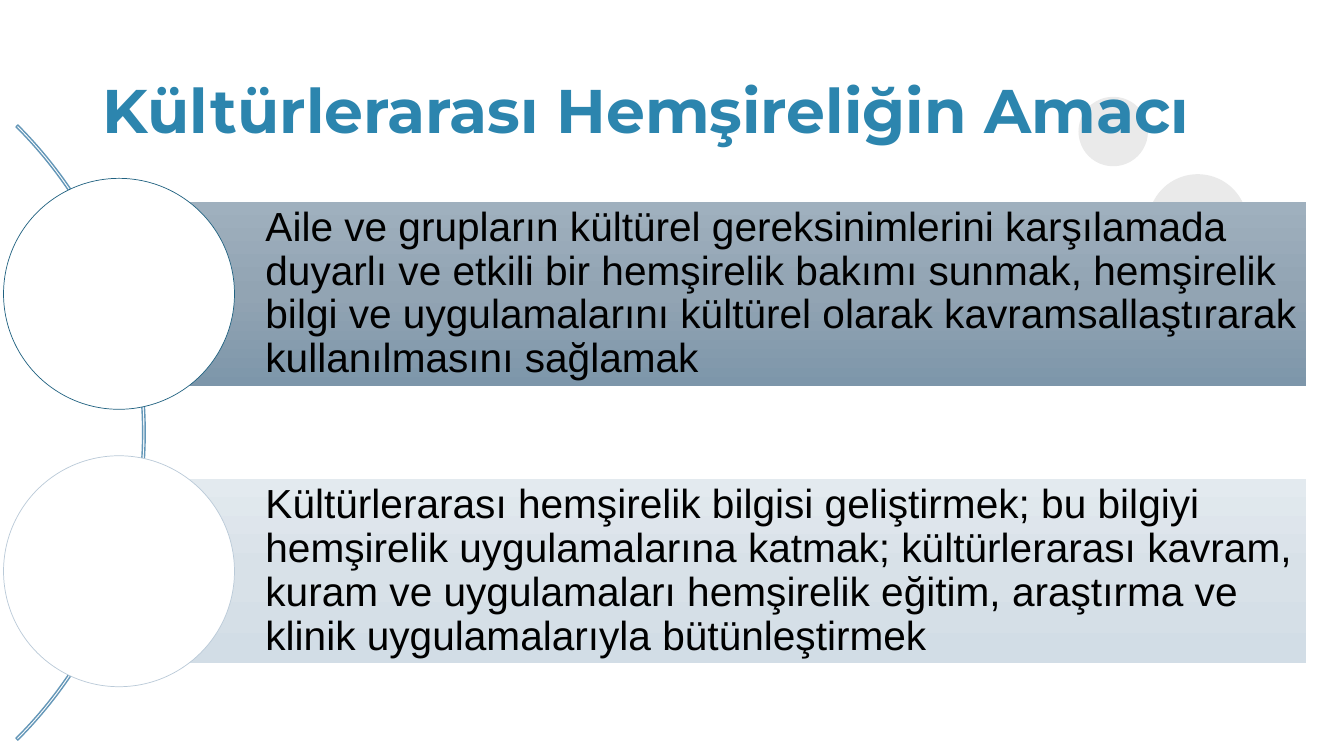
from copy import deepcopy
from pptx import Presentation
from pptx.dml.color import RGBColor
from pptx.enum.shapes import MSO_SHAPE
from pptx.enum.text import MSO_ANCHOR, MSO_AUTO_SIZE, PP_ALIGN
from pptx.oxml.ns import qn
from pptx.util import Cm, Pt

OVAL, RECT, ARC = MSO_SHAPE.OVAL, MSO_SHAPE.RECTANGLE, MSO_SHAPE.BLOCK_ARC
MIDDLE, LEFT, FIXED = MSO_ANCHOR.MIDDLE, PP_ALIGN.LEFT, MSO_AUTO_SIZE.NONE

# Content
TITLE = "Kültürlerarası Hemşireliğin Amacı"
GOALS = [
    ("Aile ve grupların kültürel gereksinimlerini karşılamada duyarlı ve etkili "
     "bir hemşirelik bakımı sunmak, hemşirelik bilgi ve uygulamalarını kültürel "
     "olarak kavramsallaştırarak kullanılmasını sağlamak",
     ("9FB0BE", "92A4B3", "7D96AA"), "216281"),
    ("Kültürlerarası hemşirelik bilgisi geliştirmek; bu bilgiyi hemşirelik "
     "uygulamalarına katmak; kültürlerarası kavram, kuram ve uygulamaları "
     "hemşirelik eğitim, araştırma ve klinik uygulamalarıyla bütünleştirmek",
     ("E3EAEF", "D8E1E8", "D2DDE6"), "BACAD8"),
]
DOTS = [(28.93, 4.39, 2.51), (27.18, 2.44, 1.75)]  # left, top, size

# Layout in centimetres
BAR_X, BAR_Y, BAR_W, BAR_H, STEP = 3, 5.08, 29.92, 4.65, 6.99
RING, CURVE, CURVE_X = 5.82, 21.92, -18.26


def color(code):
    return RGBColor.from_string(code)


def add(kind, x, y, w, h, fill=None, line=None, width=1):
    shape = slide.shapes.add_shape(kind, Cm(x), Cm(y), Cm(w), Cm(h))
    shape.shadow.inherit = False
    if fill:
        shape.fill.solid()
        shape.fill.fore_color.rgb = color(fill)
    else:
        shape.fill.background()
    if line:
        shape.line.color.rgb = color(line)
        shape.line.width = Pt(width)
    else:
        shape.line.fill.background()
    return shape


def shade(shape, codes):
    shape.fill.gradient()
    shape.fill.gradient_angle = 270
    stops = shape._element.spPr.find(".//" + qn("a:gsLst"))
    stops.append(deepcopy(stops[-1]))
    for i, (stop, code) in enumerate(zip(shape.fill.gradient_stops, codes)):
        stop.position = i / (len(codes) - 1)
        stop.color.rgb = color(code)


def write(shape, text, font, size, code, bold=False):
    frame = shape.text_frame
    frame.word_wrap = True
    frame.auto_size = FIXED
    frame.vertical_anchor = MIDDLE
    para = frame.paragraphs[0]
    para.alignment = LEFT
    para.line_spacing = 0.9
    run = para.add_run()
    run.text = text
    run.font.name, run.font.size, run.font.bold = font, Pt(size), bold
    run.font.color.rgb = color(code)
    return frame


prs = Presentation()
prs.slide_width, prs.slide_height = Cm(33.87), Cm(19.05)
slide = prs.slides.add_slide(prs.slide_layouts[5])

# Grey dots behind the title
for x, y, size in DOTS:
    add(OVAL, x, y, size, size, "EAEAEA")

# Title, raised above the dots
title = slide.shapes.title
title.left, title.top, title.width, title.height = Cm(2.34), Cm(1.02), Cm(29.21), Cm(3.68)
write(title, TITLE, "Montserrat", 44, "2C85AE", True)
slide.shapes._spTree.append(title._element)

# Curve, centred on the stack of bars
mid = BAR_Y + (BAR_H + STEP * (len(GOALS) - 1)) / 2
curve = add(ARC, CURVE_X, mid - CURVE / 2, CURVE, CURVE, line="6497B8")
for i, value in enumerate((189, 27, 0.003)):
    curve.adjustments[i] = value

# Bars, each with a ring centred on its left edge
for i, (text, codes, edge) in enumerate(GOALS):
    y = BAR_Y + i * STEP
    bar = add(RECT, BAR_X, y, BAR_W, BAR_H)
    shade(bar, codes)
    frame = write(bar, text, "Arial", 29, "000000")
    frame.margin_left = Cm(3.69)
    frame.margin_right = frame.margin_top = frame.margin_bottom = Cm(0.2)
    add(OVAL, BAR_X - RING / 2, y + (BAR_H - RING) / 2, RING, RING, "FFFFFF", edge, 0.5)

prs.save("out.pptx")
